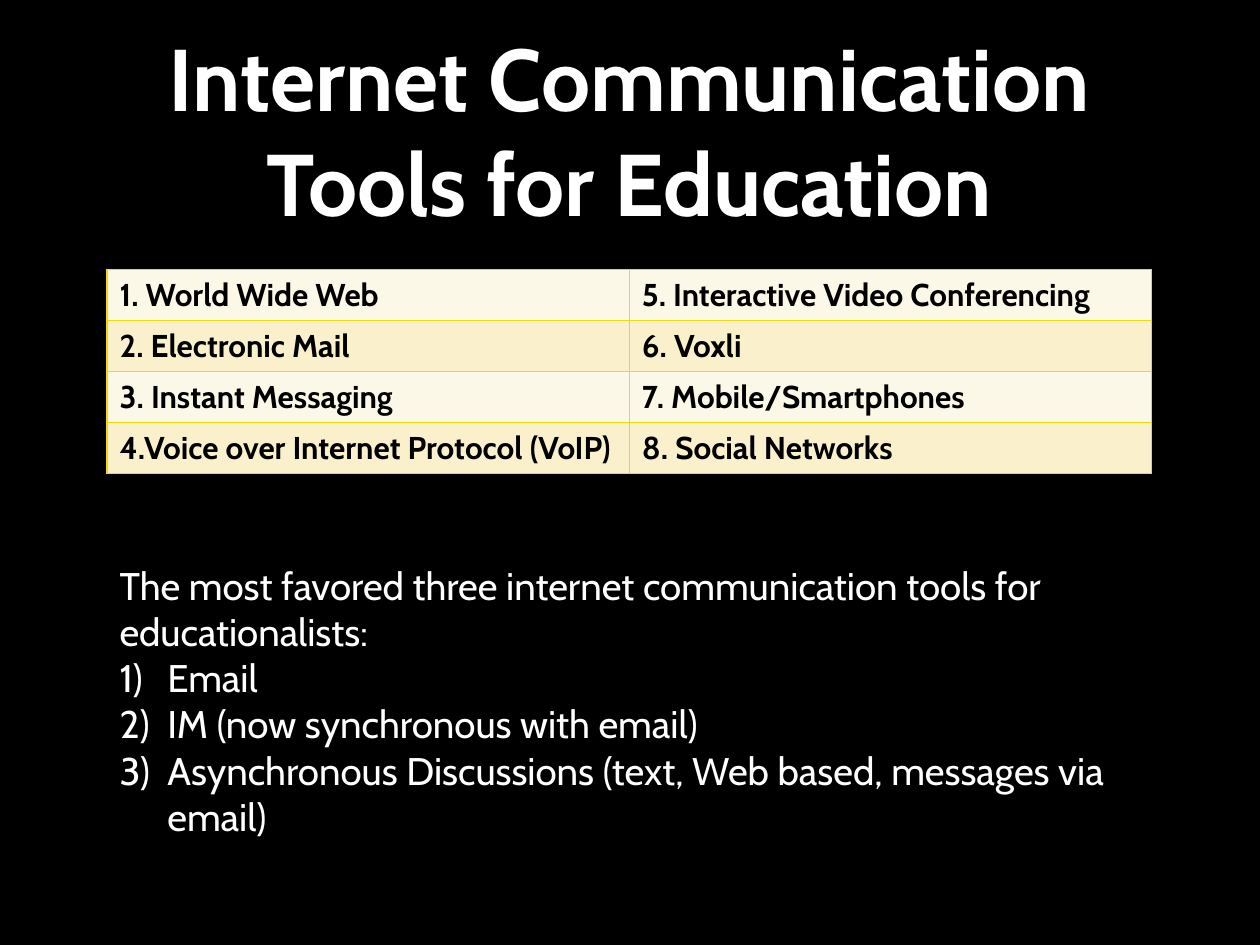
from lxml.etree import SubElement
from pptx import Presentation
from pptx.dml.color import RGBColor
from pptx.enum.text import MSO_ANCHOR, PP_ALIGN
from pptx.oxml.ns import qn
from pptx.util import Inches, Pt

BLACK = RGBColor(0x00, 0x00, 0x00)
WHITE = RGBColor(0xFF, 0xFF, 0xFF)
CREAM = RGBColor(0xFC, 0xF8, 0xE7)
SAND = RGBColor(0xFA, 0xF1, 0xCC)
YELLOW = RGBColor(0xF2, 0xD9, 0x08)

TOOLS = [
    ("1. World Wide Web", "5. Interactive Video Conferencing"),
    ("2. Electronic Mail", "6. Voxli"),
    ("3. Instant Messaging", "7. Mobile/Smartphones"),
    ("4.Voice over Internet Protocol (VoIP)", "8. Social Networks"),
]
INTRO = "The most favored three internet communication tools for educationalists:"
FAVORITES = [
    "Email",
    "IM (now synchronous with email)",
    "Asynchronous Discussions (text, Web based, messages via email)",
]


class SlideBuilder:
    """Draws styled text and tables on one page."""

    font_name = "Cabin"
    indent = Inches(0.38)

    def __init__(self, page):
        self.page = page
        page.background.fill.solid()
        page.background.fill.fore_color.rgb = BLACK

    def set_text(self, para, text, size, color, bold=False):
        para.text = text
        font = para.font
        font.name, font.size, font.bold = self.font_name, Pt(size), bold
        font.color.rgb = color

    def text_box(self, left, top, width, height):
        box = self.page.shapes.add_textbox(
            Inches(left), Inches(top), Inches(width), Inches(height)
        )
        box.text_frame.word_wrap = True
        return box.text_frame

    def title(self, text, *place):
        frame = self.text_box(*place)
        frame.vertical_anchor = MSO_ANCHOR.MIDDLE
        para = frame.paragraphs[0]
        para.alignment = PP_ALIGN.CENTER
        self.set_text(para, text, 50, WHITE, bold=True)

    def numbered_list(self, intro, items, *place):
        frame = self.text_box(*place)
        self.set_text(frame.paragraphs[0], intro, 22, WHITE)
        for item in items:
            para = frame.add_paragraph()
            properties = para._p.get_or_add_pPr()
            properties.set("marL", str(self.indent))
            properties.set("indent", str(-self.indent))
            SubElement(properties, qn("a:buAutoNum"), type="arabicParenR")
            self.set_text(para, item, 22, WHITE)

    def border(self, cell):
        properties = cell._tc.get_or_add_tcPr()
        for side in ("lnL", "lnR", "lnT", "lnB"):
            line = SubElement(properties, qn(f"a:{side}"), w=str(Pt(1)))
            fill = SubElement(line, qn("a:solidFill"))
            SubElement(fill, qn("a:srgbClr"), val=str(YELLOW))

    def table(self, rows, left, top, width, height):
        table = self.page.shapes.add_table(
            len(rows), len(rows[0]),
            Inches(left), Inches(top), Inches(width), Inches(height),
        ).table
        for row_index, texts in enumerate(rows):
            for column_index, text in enumerate(texts):
                cell = table.cell(row_index, column_index)
                self.border(cell)
                cell.fill.solid()
                cell.fill.fore_color.rgb = SAND if row_index % 2 else CREAM
                self.set_text(cell.text_frame.paragraphs[0], text, 18, BLACK, bold=True)


def main():
    deck = Presentation()
    deck.slide_width, deck.slide_height = Inches(10), Inches(7.5)
    builder = SlideBuilder(deck.slides.add_slide(deck.slide_layouts[6]))
    builder.title("Internet Communication Tools for Education", 0.85, 0.12, 8.29, 1.81)
    builder.table(TOOLS, 0.85, 2.14, 8.29, 1.62)
    builder.numbered_list(INTRO, FAVORITES, 0.85, 4.41, 8.65, 2.32)
    deck.save("out.pptx")


if __name__ == "__main__":
    main()
